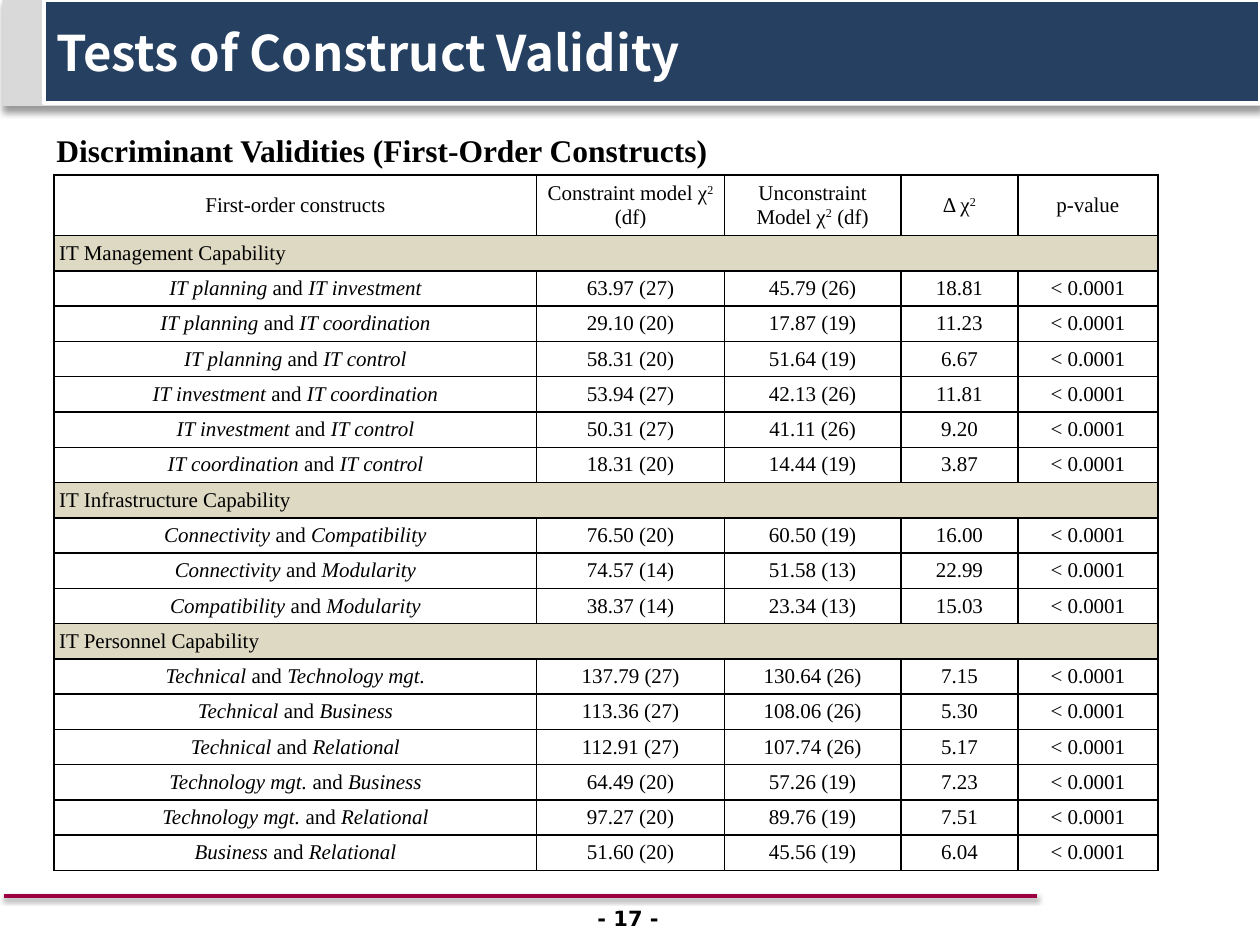
from lxml.etree import SubElement
from pptx import Presentation
from pptx.dml.color import RGBColor
from pptx.enum.shapes import MSO_CONNECTOR as Connector, MSO_SHAPE as Shape
from pptx.enum.text import MSO_ANCHOR as Anchor, PP_ALIGN as Align
from pptx.oxml.ns import qn
from pptx.util import Inches, Pt

TITLE_FONT, PAGE_FONT, BODY_FONT = "Noto Sans CJK KR", "DejaVu Sans", "Times New Roman"
BLACK, WHITE, NAVY, GREY, CRIMSON, SAND = "000000", "FFFFFF", "254061", "D9D9D9", "9C0042", "DDD9C3"

HEADINGS = ["First-order constructs", "Constraint model χ^2^ (df)",
            "Unconstraint Model χ^2^ (df)", "Δ χ^2^", "p-value"]
P_VALUE = "< 0.0001"
CAPABILITIES = {
    "IT Management Capability": [
        ("IT planning", "IT investment", "63.97 (27)", "45.79 (26)", "18.81"),
        ("IT planning", "IT coordination", "29.10 (20)", "17.87 (19)", "11.23"),
        ("IT planning", "IT control", "58.31 (20)", "51.64 (19)", "6.67"),
        ("IT investment", "IT coordination", "53.94 (27)", "42.13 (26)", "11.81"),
        ("IT investment", "IT control", "50.31 (27)", "41.11 (26)", "9.20"),
        ("IT coordination", "IT control", "18.31 (20)", "14.44 (19)", "3.87"),
    ],
    "IT Infrastructure Capability": [
        ("Connectivity", "Compatibility", "76.50 (20)", "60.50 (19)", "16.00"),
        ("Connectivity", "Modularity", "74.57 (14)", "51.58 (13)", "22.99"),
        ("Compatibility", "Modularity", "38.37 (14)", "23.34 (13)", "15.03"),
    ],
    "IT Personnel Capability": [
        ("Technical", "Technology mgt.", "137.79 (27)", "130.64 (26)", "7.15"),
        ("Technical", "Business", "113.36 (27)", "108.06 (26)", "5.30"),
        ("Technical", "Relational", "112.91 (27)", "107.74 (26)", "5.17"),
        ("Technology mgt.", "Business", "64.49 (20)", "57.26 (19)", "7.23"),
        ("Technology mgt.", "Relational", "97.27 (20)", "89.76 (19)", "7.51"),
        ("Business", "Relational", "51.60 (20)", "45.56 (19)", "6.04"),
    ],
}


def rgb(code):
    return RGBColor.from_string(code)


class ValiditySlide:
    """Draws the elements of one slide in a shared style."""

    def __init__(self, slide):
        self.shapes = slide.shapes

    def shadow(self, element, alpha, blur, distance):
        properties = element._element.spPr
        for old in properties.findall(qn("a:effectLst")):
            properties.remove(old)
        cast = SubElement(SubElement(properties, qn("a:effectLst")), qn("a:outerShdw"),
                          blurRad=str(Pt(blur)), dist=str(Pt(distance)), dir="5400000",
                          algn="t", rotWithShape="0")
        tint = SubElement(cast, qn("a:srgbClr"), val=BLACK)
        SubElement(tint, qn("a:alpha"), val=str(alpha * 1000))

    def panel(self, kind, box, fill, line=None):
        panel = self.shapes.add_shape(kind, *map(Inches, box))
        panel.shadow.inherit = False
        panel.fill.solid()
        panel.fill.fore_color.rgb = rgb(fill)
        if line:
            panel.line.color.rgb = rgb(line)
            panel.line.width = Pt(2.25)
        else:
            panel.line.fill.background()
        return panel

    def rule(self, start, end, color, width):
        rule = self.shapes.add_connector(Connector.STRAIGHT, *map(Inches, start + end))
        rule.line.color.rgb = rgb(color)
        rule.line.width = Pt(width)
        return rule

    def set_text(self, frame, text, font, size, color=BLACK, bold=False, align=Align.LEFT):
        paragraph = frame.paragraphs[0]
        paragraph.alignment = align
        paragraph.font.name, paragraph.font.size = font, Pt(size)
        paragraph.font.bold, paragraph.font.color.rgb = bold, rgb(color)
        mark = "^" if "^" in text else "_"
        for index, part in enumerate(text.split(mark)):
            if not part:
                continue
            run = paragraph.add_run()
            run.text = part
            if index % 2 and mark == "^":
                run._r.get_or_add_rPr().set("baseline", "30000")
            elif index % 2:
                run.font.italic = True

    def label(self, box, text, font, size, align=Align.LEFT):
        frame = self.shapes.add_textbox(*map(Inches, box)).text_frame
        frame.word_wrap = True
        self.set_text(frame, text, font, size, bold=True, align=align)

    def cell(self, cell, text, fill=None, align=Align.CENTER):
        cell.vertical_anchor = Anchor.MIDDLE
        cell.margin_left = cell.margin_right = Inches(0.04)
        cell.margin_top = cell.margin_bottom = Inches(0.04)
        properties = cell._tc.get_or_add_tcPr()
        for side in ("a:lnL", "a:lnR", "a:lnT", "a:lnB"):
            border = SubElement(properties, qn(side), w=str(Pt(1)))
            SubElement(SubElement(border, qn("a:solidFill")), qn("a:srgbClr"), val=BLACK)
        if fill:
            cell.fill.solid()
            cell.fill.fore_color.rgb = rgb(fill)
        else:
            cell.fill.background()
        self.set_text(cell.text_frame, text, BODY_FONT, 12, align=align)

    def table(self, left, top, widths, header_height, row_height, rows):
        height = header_height + row_height * (len(rows) - 1)
        table = self.shapes.add_table(len(rows), len(widths), Inches(left), Inches(top),
                                      Inches(sum(widths)), Inches(height)).table
        table.first_row = table.horz_banding = False
        for column, width in zip(table.columns, widths):
            column.width = Inches(width)
        for index, texts in enumerate(rows):
            table.rows[index].height = Inches(row_height if index else header_height)
            is_group = len(texts) == 1
            if is_group:
                table.cell(index, 0).merge(table.cell(index, len(widths) - 1))
                texts = texts + [""] * (len(widths) - 1)
            for column, text in enumerate(texts):
                self.cell(table.cell(index, column), text, SAND if is_group else None,
                          Align.LEFT if is_group else Align.CENTER)


def main():
    deck = Presentation()
    deck.slide_width, deck.slide_height = Inches(10), Inches(7.5)
    page = ValiditySlide(deck.slides.add_slide(deck.slide_layouts[6]))

    band = page.panel(Shape.ROUNDED_RECTANGLE, (0.02, -0.01, 10, 0.85), GREY)
    band.adjustments[0] = 0
    page.shadow(band, 40, 4, 3)
    footer_rule = page.rule((0.03, 7.11), (8.23, 7.11), CRIMSON, 2)
    page.shadow(footer_rule, 38, 3.1, 1.6)

    title = page.panel(Shape.RECTANGLE, (0.35, 0, 9.65, 0.82), NAVY, WHITE).text_frame
    title.word_wrap = False
    title.vertical_anchor = Anchor.MIDDLE
    page.set_text(title, "Tests of Construct Validity", TITLE_FONT, 28, WHITE, bold=True)

    page.label((3.82, 7.14, 2.33, 0.28), "- 17 -", PAGE_FONT, 12, Align.CENTER)
    page.label((0.35, 0.99, 9.53, 0.4), "Discriminant Validities (First-Order Constructs)",
               BODY_FONT, 18)

    rows = [HEADINGS]
    for capability, pairs in CAPABILITIES.items():
        rows.append([capability])
        rows += [[f"_{first}_ and _{second}_", *values, P_VALUE]
                 for first, second, *values in pairs]
    page.table(0.43, 1.39, [3.83, 1.49, 1.4, 0.93, 1.11], 0.47, 0.28, rows)

    deck.save("out.pptx")


if __name__ == "__main__":
    main()
